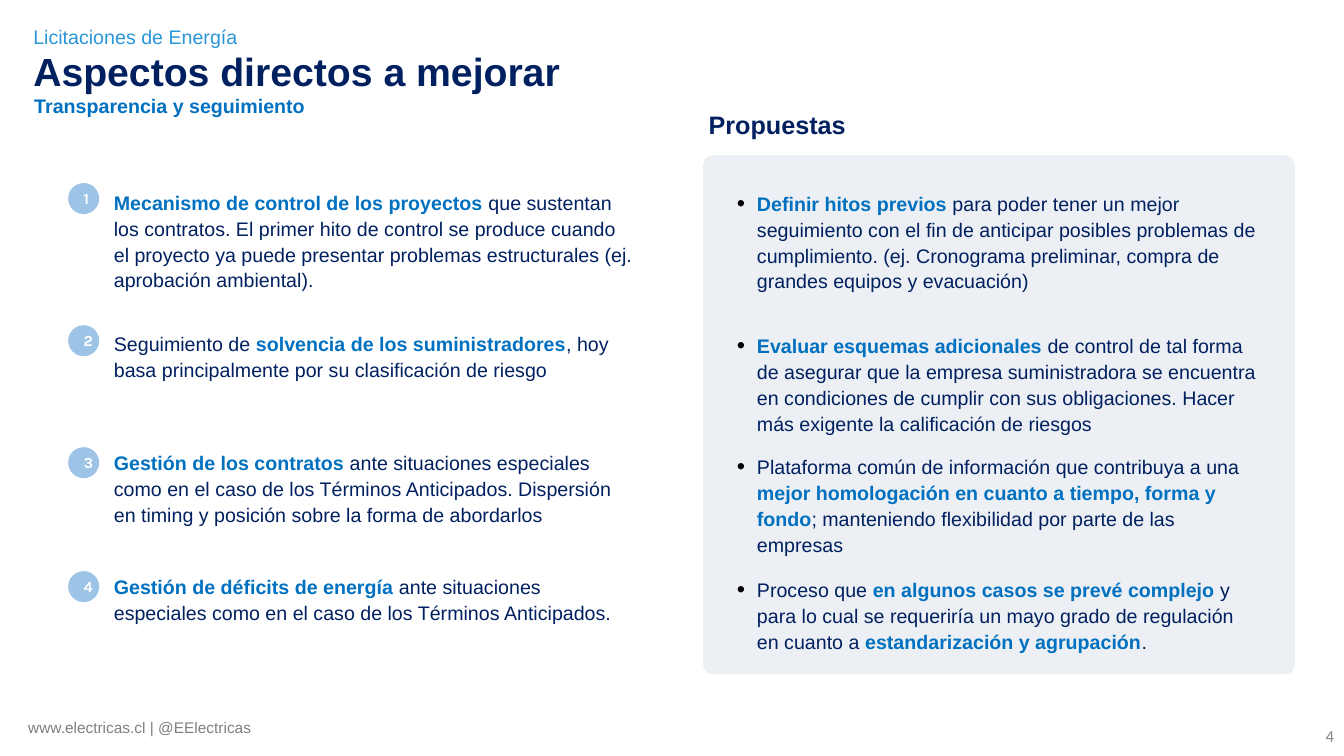
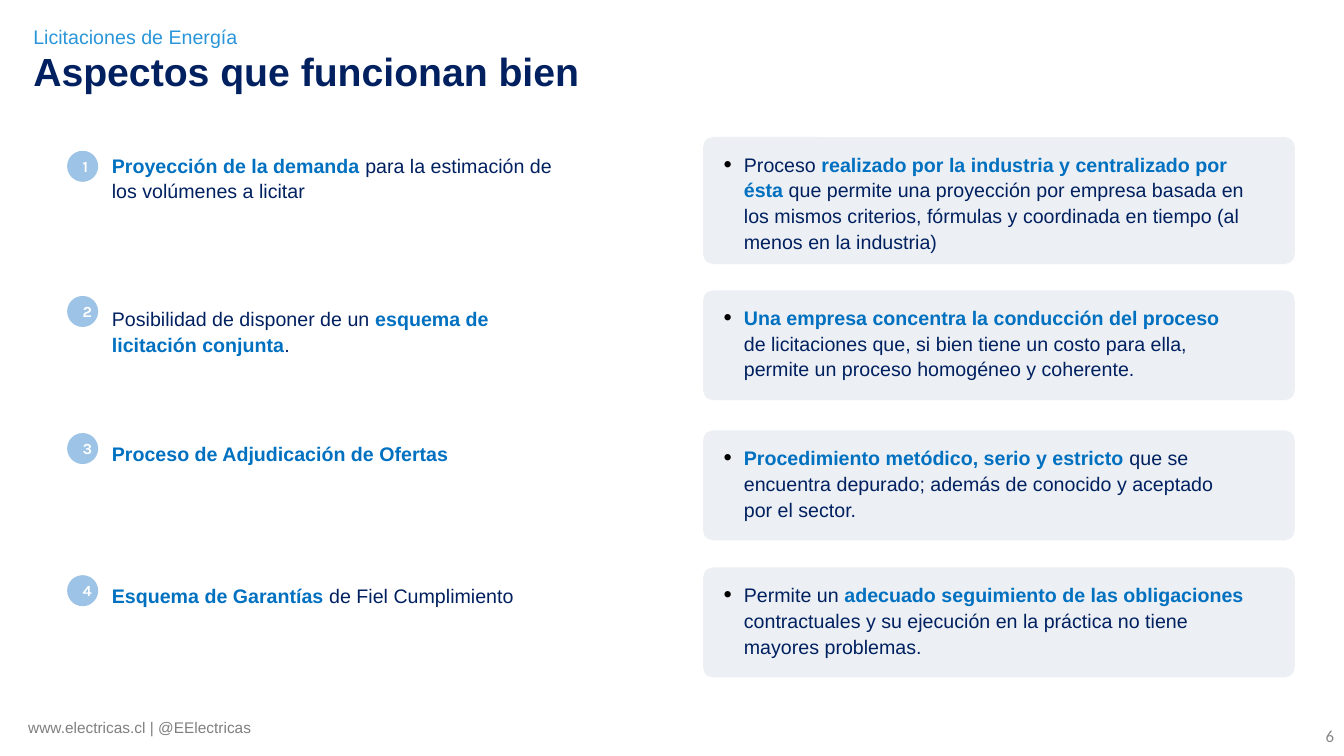
from dataclasses import dataclass

import pptx
import pptx.dml.color
import pptx.enum.shapes
import pptx.enum.text
import pptx.oxml
import pptx.oxml.ns
import pptx.util
from lxml import etree

ALIGN = pptx.enum.text.PP_ALIGN
ANCHOR = pptx.enum.text.MSO_ANCHOR
SHAPE = pptx.enum.shapes.MSO_SHAPE

COLS, ROWS = 133.33, 75  # grid cells of a tenth of an inch


@dataclass(frozen=True)
class Theme:
    navy: str = "002060"
    blue: str = "0070C0"
    sky: str = "2A96D9"
    badge: str = "9DC3E6"
    panel: str = "D6DCE5"
    panel_alpha: int = 44
    footer: str = "7F7F7F"
    number: str = "888888"
    white: str = "FFFFFF"
    bullet: str = "000000"
    font: str = "Arial"
    badge_font: str = "Karla"
    number_font: str = "Calibri"
    title_size: int = 28
    heading_size: int = 18
    body_size: int = 14
    number_size: int = 12
    small_size: int = 11
    tight: tuple = (0.4, 0.4, 0.4, 0.4)
    body_inset: tuple = (0.5, 0.5, 0.6, 0.7)
    footer_inset: tuple = (0.7, 0.4, 0.7, 0.4)
    number_inset: tuple = (1, 0.5, 1, 0.5)


def cells(n):
    return pptx.util.Inches(n / 10)


def rgb(code):
    return pptx.dml.color.RGBColor.from_string(code)


def add_bullet(p, color):
    pPr = p._p.get_or_add_pPr()
    pPr.set("marL", str(cells(2)))
    pPr.set("indent", str(cells(-2)))
    qn = pptx.oxml.ns.qn
    clr = etree.SubElement(pPr, qn("a:buClr"))
    etree.SubElement(clr, qn("a:srgbClr"), val=color)
    etree.SubElement(pPr, qn("a:buSzPct"), val="120000")
    etree.SubElement(pPr, qn("a:buFont"), typeface="Arial")
    etree.SubElement(pPr, qn("a:buChar"), char="•")


def write(tf, text, *, size, color, font, bold=False, accent=None, align=None,
          anchor=ANCHOR.TOP, spacing=None, bullet=None):
    """Fill tf with one paragraph; parts between asterisks are bold in accent."""
    tf.word_wrap = True
    tf.vertical_anchor = anchor
    p = tf.paragraphs[0]
    if bullet:
        add_bullet(p, bullet)
    if align is not None:
        p.alignment = align
    if spacing:
        p.line_spacing = spacing
    for i, part in enumerate(text.split("*")):
        if not part:
            continue
        strong = i % 2 == 1
        r = p.add_run()
        r.text = part
        r.font.name = font
        r.font.size = pptx.util.Pt(size)
        r.font.bold = bold or strong
        r.font.color.rgb = rgb(accent if strong else color)


class Deck:
    """Holds the style and the slide being drawn; lengths are grid cells."""

    def __init__(self, theme):
        self.t = theme
        self.prs = pptx.Presentation()
        self.prs.slide_width = cells(COLS)
        self.prs.slide_height = cells(ROWS)
        self.s = None

    def text(self, text, col, row, width, height, inset, **fmt):
        box = self.s.shapes.add_textbox(*map(cells, (col, row, width, height)))
        tf = box.text_frame
        (tf.margin_left, tf.margin_top,
         tf.margin_right, tf.margin_bottom) = map(cells, inset)
        write(tf, text, **{"font": self.t.font, **fmt})

    def shape(self, kind, col, row, width, height, color):
        sp = self.s.shapes.add_shape(kind, *map(cells, (col, row, width, height)))
        sp.shadow.inherit = False
        sp.fill.solid()
        sp.fill.fore_color.rgb = rgb(color)
        return sp

    def slide(self, title, number):
        t = self.t
        self.s = self.prs.slides.add_slide(self.prs.slide_layouts[6])
        self.text("Licitaciones de Energía", 2.9, 2, 43.9, 3.2, t.tight,
                  size=t.body_size, color=t.sky, anchor=ANCHOR.MIDDLE)
        self.text(title, 2.9, 4.25, 115, 5, t.tight,
                  size=t.title_size, color=t.navy, bold=True)
        self.text("www.electricas.cl | @EElectricas", 2.1, 70.8, 23.7, 2.6,
                  t.footer_inset, size=t.small_size, color=t.footer)
        self.text(str(number), COLS - 30, ROWS - 4, 30, 4, t.number_inset,
                  size=t.number_size, color=t.number, font=t.number_font,
                  align=ALIGN.RIGHT, anchor=ANCHOR.MIDDLE)

    def heading(self, text, col, row, size, color):
        self.text(text, col, row, 53, 4, self.t.body_inset,
                  size=size, color=color, bold=True, spacing=1.1)

    def body(self, text, col, row, width=53, bullet=False):
        t = self.t
        self.text(text, col, row, width, 9, t.body_inset, size=t.body_size,
                  color=t.navy, accent=t.blue, spacing=1.1,
                  bullet=t.bullet if bullet else None)

    def badge(self, number, col, row):
        t = self.t
        sp = self.shape(SHAPE.OVAL, col, row, 2.8, 2.8, t.badge)
        sp.line.color.rgb = rgb(t.badge)
        sp.line.width = pptx.util.Pt(2)
        write(sp.text_frame, str(number), size=t.small_size, color=t.white,
              font=t.badge_font, bold=True, align=ALIGN.CENTER,
              anchor=ANCHOR.MIDDLE)

    def panel(self, row, height):
        sp = self.shape(SHAPE.ROUNDED_RECTANGLE, 69.75, row, 58.7, height,
                        self.t.panel)
        sp.adjustments[0] = 1 / height
        sp.line.fill.background()
        clr = sp.fill._xPr.find(".//" + pptx.oxml.ns.qn("a:srgbClr"))
        etree.SubElement(clr, pptx.oxml.ns.qn("a:alpha"),
                         val=str(self.t.panel_alpha * 1000))


# badge row, topic row, topic, proposal row, proposal
IMPROVEMENTS = [
    (18.3, 18.2,
     "*Mecanismo de control de los proyectos* que sustentan los contratos. "
     "El primer hito de control se produce cuando el proyecto ya puede "
     "presentar problemas estructurales (ej. aprobación ambiental).",
     18.3,
     "*Definir hitos previos* para poder tener un mejor seguimiento con el fin "
     "de anticipar posibles problemas de cumplimiento. (ej. Cronograma "
     "preliminar, compra de grandes equipos y evacuación)"),
    (32.4, 32.2,
     "Seguimiento de *solvencia de los suministradores*, hoy basa "
     "principalmente por su clasificación de riesgo",
     32.4,
     "*Evaluar esquemas adicionales* de control de tal forma de asegurar que "
     "la empresa suministradora se encuentra en condiciones de cumplir con sus "
     "obligaciones. Hacer más exigente la calificación de riesgos"),
    (44.5, 44,
     "*Gestión de los contratos* ante situaciones especiales como en el caso "
     "de los Términos Anticipados. Dispersión en timing y posición sobre la "
     "forma de abordarlos",
     44.4,
     "Plataforma común de información que contribuya a una *mejor "
     "homologación en cuanto a tiempo, forma y fondo*; manteniendo "
     "flexibilidad por parte de las empresas"),
    (56.8, 56.3,
     "*Gestión de déficits de energía* ante situaciones especiales como en el "
     "caso de los Términos Anticipados.",
     56.6,
     "Proceso que *en algunos casos se prevé complejo* y para lo cual se "
     "requeriría un mayo grado de regulación en cuanto a *estandarización y "
     "agrupación*."),
]

# badge row, topic row, topic width, topic, panel row, panel height, text width, benefit
STRENGTHS = [
    (15.1, 14.5, 46.7,
     "*Proyección de la demanda* para la estimación de los volúmenes a licitar",
     13.6, 12.6, 55.2,
     "Proceso *realizado por la industria y centralizado por ésta* que permite "
     "una proyección por empresa basada en los mismos criterios, fórmulas y "
     "coordinada en tiempo (al menos en la industria)"),
    (29.5, 29.7, 45.8,
     "Posibilidad de disponer de un *esquema de licitación conjunta*.",
     28.8, 10.9, 53,
     "*Una empresa concentra la conducción del proceso* de licitaciones que, "
     "si bien tiene un costo para ella, permite un proceso homogéneo y "
     "coherente."),
    (43.1, 43.1, 42.8,
     "*Proceso de Adjudicación de Ofertas*",
     42.7, 10.9, 53,
     "*Procedimiento metódico, serio y estricto* que se encuentra depurado; "
     "además de conocido y aceptado por el sector."),
    (57.2, 57.2, 46.7,
     "*Esquema de Garantías* de Fiel Cumplimiento",
     56.3, 10.9, 53,
     "Permite un *adecuado seguimiento de las obligaciones* contractuales y su "
     "ejecución en la práctica no tiene mayores problemas."),
]


def improvements_slide(deck):
    t = deck.t
    deck.slide("Aspectos directos a mejorar", 4)
    deck.heading("Transparencia y seguimiento", 2.9, 8.6, t.body_size, t.blue)
    deck.heading("Propuestas", 69.8, 10.1, t.heading_size, t.navy)
    deck.panel(15.4, 51.5)
    for n, (badge_row, row, topic, proposal_row, proposal) in enumerate(IMPROVEMENTS, 1):
        deck.badge(n, 6.9, badge_row)
        deck.body(topic, 10.8, row)
        deck.body(proposal, 72.6, proposal_row, bullet=True)


def strengths_slide(deck):
    deck.slide("Aspectos que funcionan bien", 6)
    for n, (badge_row, row, width, topic, panel_row, height,
            text_width, benefit) in enumerate(STRENGTHS, 1):
        deck.badge(n, 6.8, badge_row)
        deck.body(topic, 10.6, row, width)
        deck.panel(panel_row, height)
        deck.body(benefit, 71.3, panel_row + 0.8, text_width, bullet=True)


def main():
    deck = Deck(Theme())
    improvements_slide(deck)
    strengths_slide(deck)
    deck.prs.save("out.pptx")


if __name__ == "__main__":
    main()
